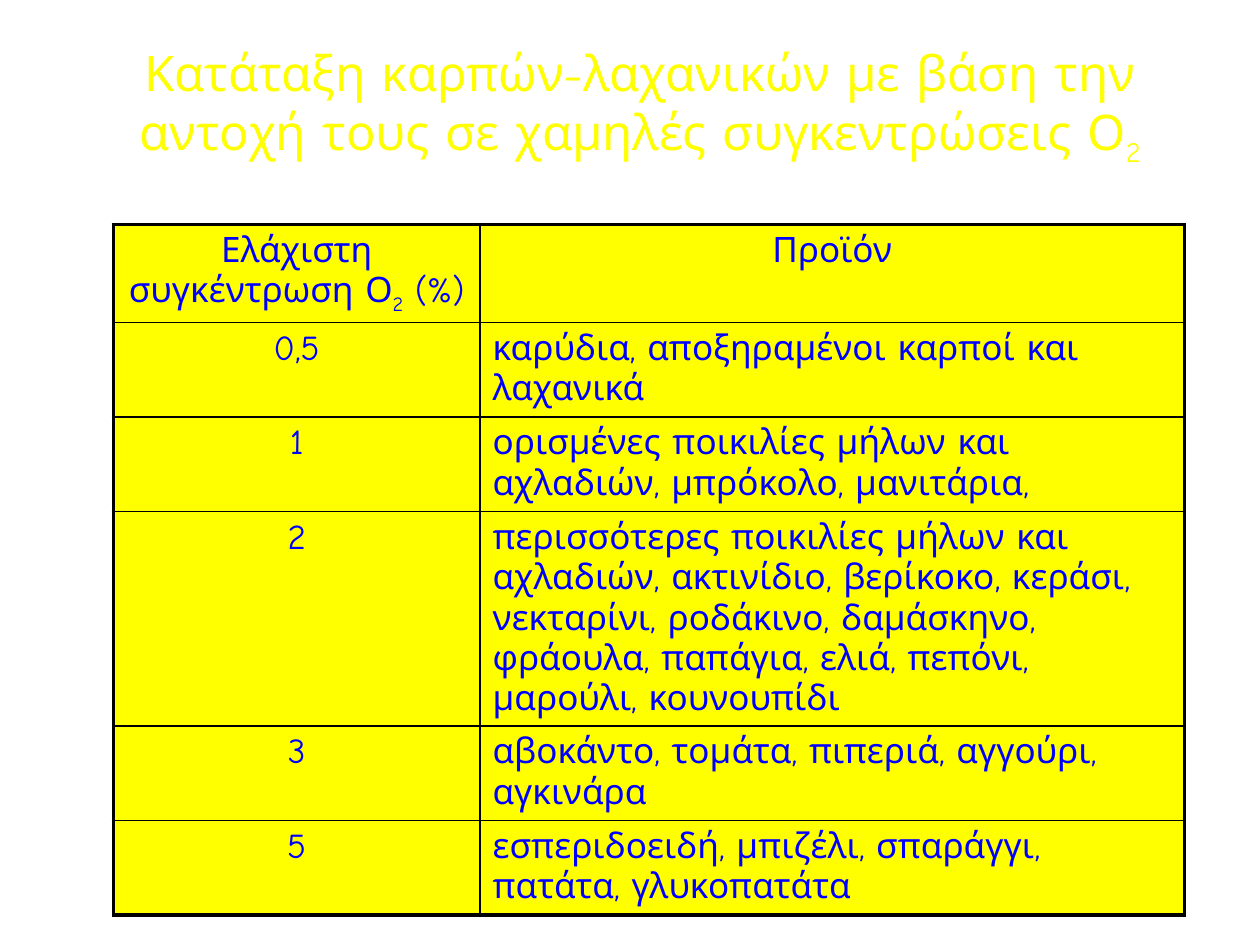
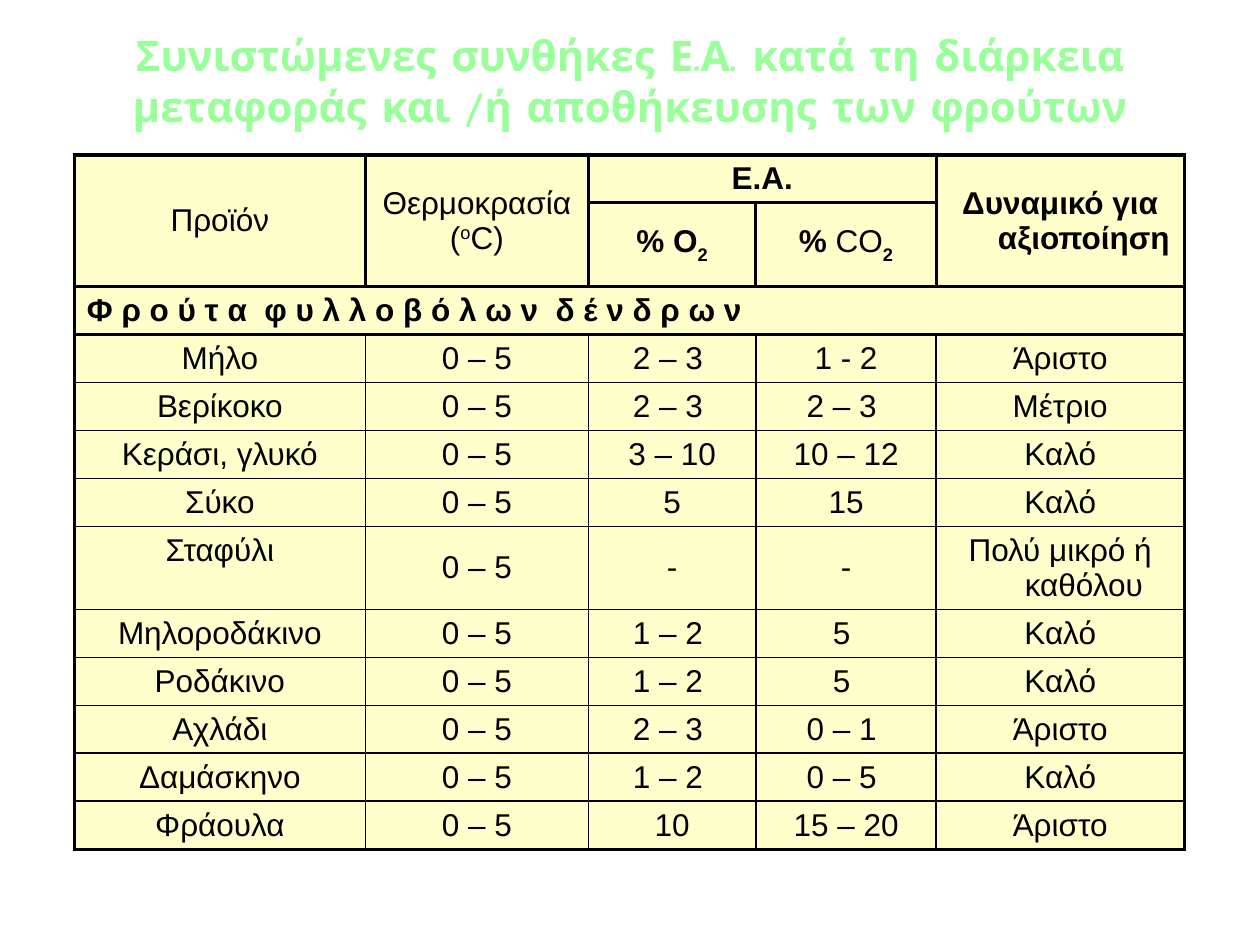
import pptx
import pptx.util
import pptx.dml.color
import pptx.enum.text
import pptx.oxml
import pptx.oxml.ns

WIDE, HIGH = pptx.util.Inches(10), pptx.util.Inches(7.5)
ALIGN = pptx.enum.text.PP_ALIGN
ANCHOR = pptx.enum.text.MSO_ANCHOR
COMIC, INK = "Comic Neue", "000000"
SHIFTS = {"_": -25000, "~": -30000, "^": 30000}

LIMITS = [
    ["Ελάχιστη συγκέντρωση Ο|_2| (%)", "Προϊόν"],
    ["0,5", "καρύδια, αποξηραμένοι καρποί και λαχανικά"],
    ["1", "ορισμένες ποικιλίες μήλων και αχλαδιών, μπρόκολο, μανιτάρια,"],
    ["2", "περισσότερες ποικιλίες μήλων και αχλαδιών, ακτινίδιο, βερίκοκο, "
          "κεράσι, νεκταρίνι, ροδάκινο, δαμάσκηνο, φράουλα, παπάγια, ελιά, "
          "πεπόνι, μαρούλι, κουνουπίδι"],
    ["3", "αβοκάντο, τομάτα, πιπεριά, αγγούρι, αγκινάρα"],
    ["5", "εσπεριδοειδή, μπιζέλι, σπαράγγι, πατάτα, γλυκοπατάτα"],
]

FRUITS = [
    ["Μήλο", "2 – 3 ", "1 - 2", "Άριστο"],
    ["Βερίκοκο", "2 – 3 ", "2 – 3 ", "Μέτριο"],
    ["Κεράσι, γλυκό", "3 – 10", "10 – 12", "Καλό"],
    ["Σύκο", "5", "15", "Καλό"],
    ["Σταφύλι", "-", "-", "Πολύ μικρό ή καθόλου"],
    ["Μηλοροδάκινο", "1 – 2 ", "5 ", "Καλό"],
    ["Ροδάκινο", "1 – 2 ", "5 ", "Καλό"],
    ["Αχλάδι", "2 – 3 ", "0 – 1 ", "Άριστο"],
    ["Δαμάσκηνο", "1 – 2 ", "0 – 5 ", "Καλό"],
    ["Φράουλα", "10", "15 – 20", "Άριστο"],
]
STORAGE = [
    ["Προϊόν", "Θερμοκρασία\n(|^ο|C)", "*Ε.Α.", "", "*Δυναμικό για αξιοποίηση"],
    ["", "", "*% Ο|~*2", "*% |CO|~*2", ""],
    ["*Φ ρ ο ύ τ α  φ υ λ λ ο β ό λ ω ν  δ έ ν δ ρ ω ν", "", "", "", ""],
] + [[name, "0 – 5", *rest] for name, *rest in FRUITS]


def hue(code):
    return pptx.dml.color.RGBColor.from_string(code)


def across(share):
    return round(WIDE * share / 100)


def down(share):
    return round(HIGH * share / 100)


def place(left, top, width, height):
    return across(left), down(top), across(width), down(height)


def assign(item, values):
    for key, value in values.items():
        setattr(item, key, value)


def write(frame, text, font, color, align, indent=0):
    for row, line in enumerate(text.split("\n")):
        para = frame.add_paragraph() if row else frame.paragraphs[0]
        para.alignment = align
        if indent:
            props = para._p.get_or_add_pPr()
            props.set("marL", str(across(indent)))
            props.set("indent", str(-across(indent)))
        for part in filter(None, line.split("|")):
            run = para.add_run()
            assign(run.font, font)
            run.font.color.rgb = hue(color)
            if part[0] in SHIFTS:
                run.font._element.set("baseline", str(SHIFTS[part[0]]))
                part = part[1:]
            if part[0] == "*":
                run.font.bold = True
                part = part[1:]
            run.text = part


def entitle(slide, text, area, size, color, bold):
    title = slide.shapes.title
    assign(title, dict(zip(("left", "top", "width", "height"), place(*area))))
    assign(title.text_frame, {
        "word_wrap": True,
        "auto_size": pptx.enum.text.MSO_AUTO_SIZE.NONE,
        "vertical_anchor": ANCHOR.MIDDLE,
    })
    font = {"name": COMIC, "size": pptx.util.Pt(size), "bold": bold}
    write(title.text_frame, text, font, color, ALIGN.CENTER)


def edge(cell, widths):
    props = cell._tc.get_or_add_tcPr()
    for spot, (side, width) in enumerate(zip("LRTB", widths)):
        props.insert(spot, pptx.oxml.parse_xml(
            f'<a:ln{side} {pptx.oxml.ns.nsdecls("a")} w="{pptx.util.Pt(width)}">'
            f'<a:solidFill><a:srgbClr val="{INK}"/></a:solidFill></a:ln{side}>'))


def tabulate(slide, data, spot, cols, rows, look, heads=0, spans=()):
    area = place(*spot, sum(cols), sum(rows))
    table = slide.shapes.add_table(len(rows), len(cols), *area).table
    assign(table, {"first_row": False, "horz_banding": False})
    for col, share in zip(table.columns, cols):
        col.width = across(share)
    for row, share in zip(table.rows, rows):
        row.height = down(share)
    for r, line in enumerate(data):
        for c, text in enumerate(line):
            cell = table.cell(r, c)
            cell.fill.solid()
            cell.fill.fore_color.rgb = hue(look["fill"])
            cell.vertical_anchor = look["anchor"](r, c)
            heavy = (c == 0 or r < heads, c == len(cols) - 1 or r < heads,
                     r <= heads, r == len(rows) - 1 or r < heads)
            edge(cell, [look["thick"] if flag else 1 for flag in heavy])
            write(cell.text_frame, text, look["font"], look["ink"],
                  look["align"](r, c), look["indent"])
    for first, last in spans:
        table.cell(*first).merge(table.cell(*last))


def main():
    deck = pptx.Presentation()
    assign(deck, {"slide_width": WIDE, "slide_height": HIGH})
    limits, storage = (deck.slides.add_slide(deck.slide_layouts[5]) for _ in range(2))

    entitle(limits, "Κατάταξη καρπών-λαχανικών με βάση την αντοχή τους "
            "σε χαμηλές συγκεντρώσεις Ο|_2",
            (8.3, 2.8, 85, 16.67), 28, "FFFF00", False)
    tabulate(limits, LIMITS, (9, 23.73), (29.1, 55.9),
             (10.3, 10, 10, 22.67, 10, 10), {
                 "fill": "FFFF00", "ink": "0000FF", "thick": 2.25, "indent": 0,
                 "font": {"name": COMIC, "size": pptx.util.Pt(20), "bold": False},
                 "anchor": lambda r, c: ANCHOR.TOP,
                 "align": lambda r, c: ALIGN.LEFT if r and c else ALIGN.CENTER,
             })

    entitle(storage, "Συνιστώμενες συνθήκες Ε.Α. κατά τη διάρκεια "
            "μεταφοράς και /ή αποθήκευσης των φρούτων",
            (7.5, 3.73, 85, 9.47), 24, "99FF99", True)
    plain = 5.07
    tabulate(storage, STORAGE, (5.9, 16.4), (23.1, 17.7, 13.3, 14.3, 19.7),
             [plain, 8.87] + [plain] * 5 + [8.77] + [plain] * 5, {
                 "fill": "FFFFCC", "ink": INK, "thick": 2, "indent": 3.75,
                 "font": {"name": "Arial", "size": pptx.util.Pt(18), "bold": False},
                 "anchor": lambda r, c: (ANCHOR.TOP if r > 2 and c in (0, 4)
                                         else ANCHOR.MIDDLE),
                 "align": lambda r, c: ALIGN.LEFT if r == 2 else ALIGN.CENTER,
             }, heads=3, spans=[((0, 0), (1, 0)), ((0, 1), (1, 1)),
                                ((0, 2), (0, 3)), ((0, 4), (1, 4)),
                                ((2, 0), (2, 4))])
    deck.save("out.pptx")


if __name__ == "__main__":
    main()
